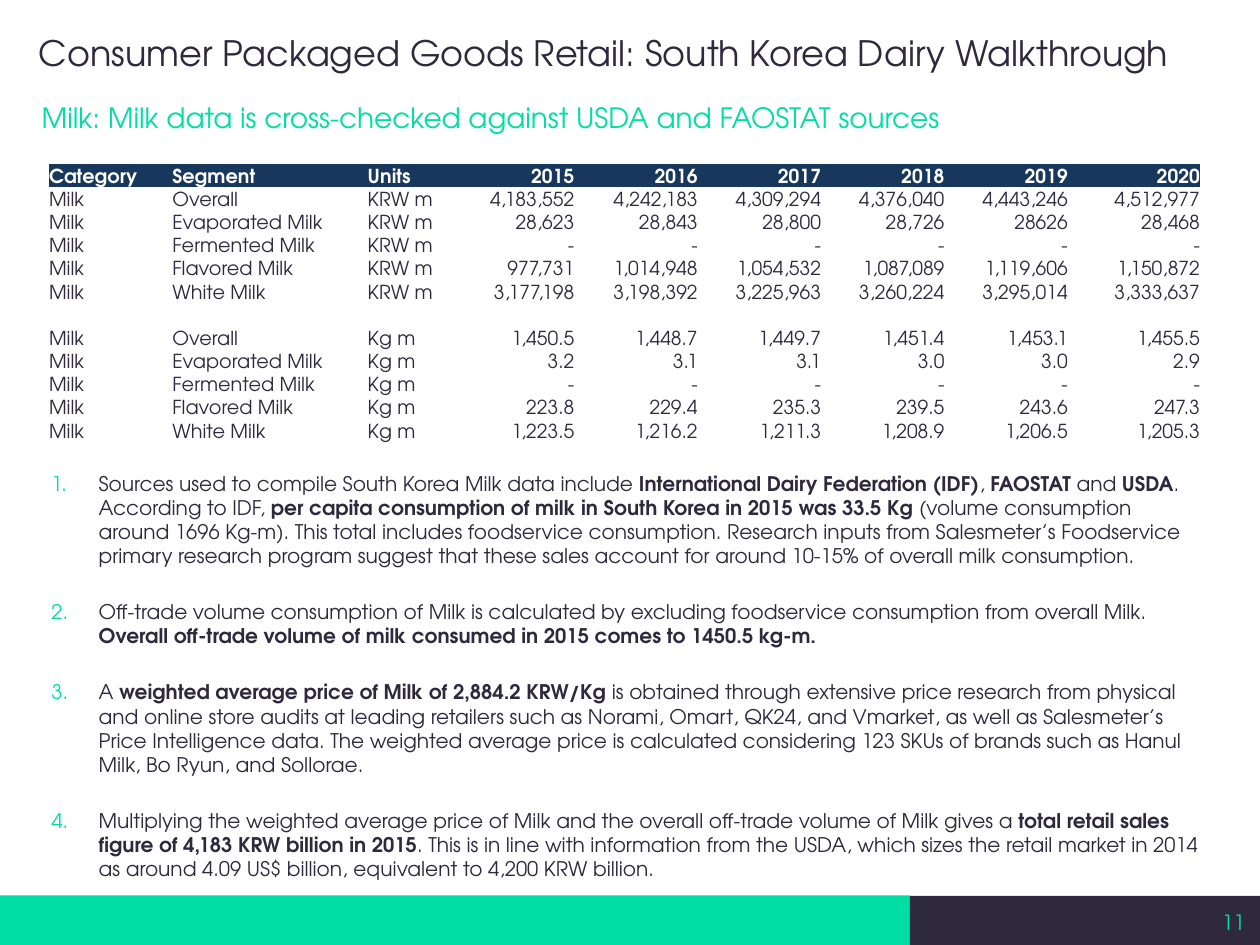
from dataclasses import dataclass

from lxml.etree import SubElement
from pptx import Presentation
from pptx.dml.color import RGBColor
from pptx.enum.shapes import MSO_SHAPE
from pptx.enum.text import MSO_ANCHOR, PP_ALIGN
from pptx.oxml.ns import qn
from pptx.util import Pt


@dataclass(frozen=True)
class Theme:
    font: str = "TeX Gyre Adventor"
    ink: str = "2E293D"
    accent: str = "00DEA5"
    header: str = "17375D"
    white: str = "FFFFFF"
    heading: float = 20
    title: float = 16
    number: float = 12
    body: float = 11.5
    table: float = 11


THEME = Theme()
NO_TABLE_STYLE = "{2D5ABB26-0587-4C30-8999-92F81FD0307C}"
COLUMN_WIDTHS = [70.5, 111.6, 52.6] + [70.5] * 6
HEADER = ["Category", "Segment", "Units", "2015", "2016", "2017", "2018", "2019", "2020"]
SEGMENTS = ["Overall", "Evaporated Milk", "Fermented Milk", "Flavored Milk", "White Milk"]
VALUES = {
    "KRW m": [
        "4,183,552 4,242,183 4,309,294 4,376,040 4,443,246 4,512,977",
        "28,623 28,843 28,800 28,726 28626 28,468",
        "- - - - - -",
        "977,731 1,014,948 1,054,532 1,087,089 1,119,606 1,150,872",
        "3,177,198 3,198,392 3,225,963 3,260,224 3,295,014 3,333,637",
    ],
    "Kg m": [
        "1,450.5 1,448.7 1,449.7 1,451.4 1,453.1 1,455.5",
        "3.2 3.1 3.1 3.0 3.0 2.9",
        "- - - - - -",
        "223.8 229.4 235.3 239.5 243.6 247.3",
        "1,223.5 1,216.2 1,211.3 1,208.9 1,206.5 1,205.3",
    ],
}
# Each note is a list of runs: (text, bold)
NOTES = [
    [("Sources used to compile South Korea Milk data include ", False),
     ("International Dairy Federation (IDF)", True), (", ", False),
     ("FAOSTAT ", True), ("and ", False), ("USDA", True),
     (". According to IDF, ", False),
     ("per capita consumption of milk in South Korea in 2015 was 33.5 Kg ", True),
     ("(volume consumption around 1696 Kg-m). This total includes foodservice "
      "consumption. Research inputs from Salesmeter’s Foodservice primary research "
      "program suggest that these sales account for around 10-15% of overall milk "
      "consumption.", False)],
    [("Off-trade volume consumption of Milk is calculated by excluding foodservice "
      "consumption from overall Milk. ", False),
     ("Overall off-trade volume of milk consumed in 2015 comes to 1450.5 kg-m.", True)],
    [("A ", False),
     ("weighted average price of Milk of 2,884.2 KRW/Kg ", True),
     ("is obtained through extensive price research from physical and online store "
      "audits at leading retailers such as Norami, Omart, QK24, and Vmarket, as well "
      "as Salesmeter’s Price Intelligence data. The weighted average price is "
      "calculated considering 123 SKUs of brands such as Hanul Milk, Bo Ryun, and "
      "Sollorae.", False)],
    [("Multiplying the weighted average price of Milk and the overall off-trade volume "
      "of Milk gives a ", False),
     ("total retail sales figure of 4,183 KRW billion in 2015", True),
     (". This is in line with information from the USDA, which sizes the retail market "
      "in 2014 as around 4.09 US$ billion, equivalent to 4,200 KRW billion.", False)],
]


def add_run(p, text, size, color, bold=False):
    r = p.add_run()
    r.text = text
    r.font.name = THEME.font
    r.font.size = Pt(size)
    r.font.bold = bold
    r.font.color.rgb = RGBColor.from_string(color)


def set_frame(tf, anchor, left=0, top=0, right=0, bottom=0):
    tf.word_wrap = True
    tf.vertical_anchor = anchor
    tf.margin_left, tf.margin_top = Pt(left), Pt(top)
    tf.margin_right, tf.margin_bottom = Pt(right), Pt(bottom)


def add_bar(s, left, top, width, height, color):
    sp = s.shapes.add_shape(MSO_SHAPE.RECTANGLE, Pt(left), Pt(top), Pt(width), Pt(height))
    sp.shadow.inherit = False
    sp.fill.solid()
    sp.fill.fore_color.rgb = RGBColor.from_string(color)
    sp.line.fill.background()


def add_line_of_text(s, box, text, size, color, align=PP_ALIGN.LEFT, left=0):
    tf = s.shapes.add_textbox(*map(Pt, box)).text_frame
    set_frame(tf, MSO_ANCHOR.MIDDLE, left=left)
    p = tf.paragraphs[0]
    p.alignment = align
    add_run(p, text, size, color)


def set_title(s, text):
    sp = s.shapes.title
    sp.left, sp.top, sp.width, sp.height = Pt(23.8), Pt(57.6), Pt(673), Pt(46)
    set_frame(sp.text_frame, MSO_ANCHOR.TOP)
    p = sp.text_frame.paragraphs[0]
    p.alignment = PP_ALIGN.LEFT
    add_run(p, text, THEME.title, THEME.accent)


def fill_cell(cell, text, is_header, is_number, gap):
    cell.margin_left = cell.margin_top = cell.margin_bottom = 0
    cell.margin_right = Pt(gap)
    cell.vertical_anchor = MSO_ANCHOR.BOTTOM
    if is_header:
        cell.fill.solid()
        cell.fill.fore_color.rgb = RGBColor.from_string(THEME.header)
    else:
        cell.fill.background()
    p = cell.text_frame.paragraphs[0]
    p.alignment = PP_ALIGN.RIGHT if is_number else PP_ALIGN.LEFT
    if text:
        add_run(p, text, THEME.table, THEME.white if is_header else THEME.ink, is_header)
    else:
        SubElement(p._p, qn("a:endParaRPr"), sz=str(THEME.table * 100))


def milk_rows():
    """Header, then one block of segments per unit with an empty row between."""
    rows = [HEADER]
    for unit, lines in VALUES.items():
        if len(rows) > 1:
            rows.append([""] * len(HEADER))
        rows += [["Milk", segment, unit, *line.split()]
                 for segment, line in zip(SEGMENTS, lines)]
    return rows


def add_milk_table(s):
    rows, row_height = milk_rows(), 13.2
    frame = s.shapes.add_table(len(rows), len(HEADER), Pt(28), Pt(93.6),
                               Pt(sum(COLUMN_WIDTHS)), Pt(row_height * len(rows)))
    table = frame.table
    table.first_row = table.horz_banding = False
    table._tbl.tblPr.find(qn("a:tableStyleId")).text = NO_TABLE_STYLE
    for column, width in zip(table.columns, COLUMN_WIDTHS):
        column.width = Pt(width)
    last = len(HEADER) - 1
    for i, row in enumerate(rows):
        table.rows[i].height = Pt(row_height)
        for j, text in enumerate(row):
            is_number = j > 2
            gap = 5 if is_number and j < last else 0
            fill_cell(table.cell(i, j), text, i == 0, is_number, gap)


def number_paragraph(p):
    pPr = p._p.get_or_add_pPr()
    pPr.set("marL", str(Pt(27)))
    pPr.set("indent", str(-Pt(27)))
    color = SubElement(pPr, qn("a:buClr"))
    SubElement(color, qn("a:srgbClr"), val=THEME.accent)
    SubElement(pPr, qn("a:buFont"), typeface=THEME.font)
    SubElement(pPr, qn("a:buAutoNum"), type="arabicPeriod")


def add_notes_list(s):
    tf = s.shapes.add_textbox(Pt(22.3), Pt(265.7), Pt(674.6), Pt(245.5)).text_frame
    set_frame(tf, MSO_ANCHOR.TOP, 7.2, 3.6, 7.2, 3.6)
    for i, runs in enumerate(NOTES):
        p = tf.add_paragraph() if i else tf.paragraphs[0]
        if i:
            p.space_before = Pt(18.2)
        number_paragraph(p)
        for text, bold in runs:
            add_run(p, text, THEME.body, THEME.ink, bold)


def main():
    prs = Presentation()
    prs.slide_width, prs.slide_height = Pt(720), Pt(540)
    s = prs.slides.add_slide(prs.slide_layouts[5])
    add_bar(s, 0, 511.7, 520, 28.3, THEME.accent)
    add_bar(s, 520, 512, 200, 28, THEME.ink)
    add_line_of_text(s, (549.4, 512.6, 162, 28.8), "11", THEME.number, THEME.accent,
                     align=PP_ALIGN.RIGHT)
    add_line_of_text(s, (0, 0, 720, 60), "Consumer Packaged Goods Retail: South Korea "
                     "Dairy Walkthrough", THEME.heading, THEME.ink, left=22.3)
    set_title(s, "Milk: Milk data is cross-checked against USDA and FAOSTAT sources")
    add_notes_list(s)
    add_milk_table(s)
    prs.save("out.pptx")


if __name__ == "__main__":
    main()
